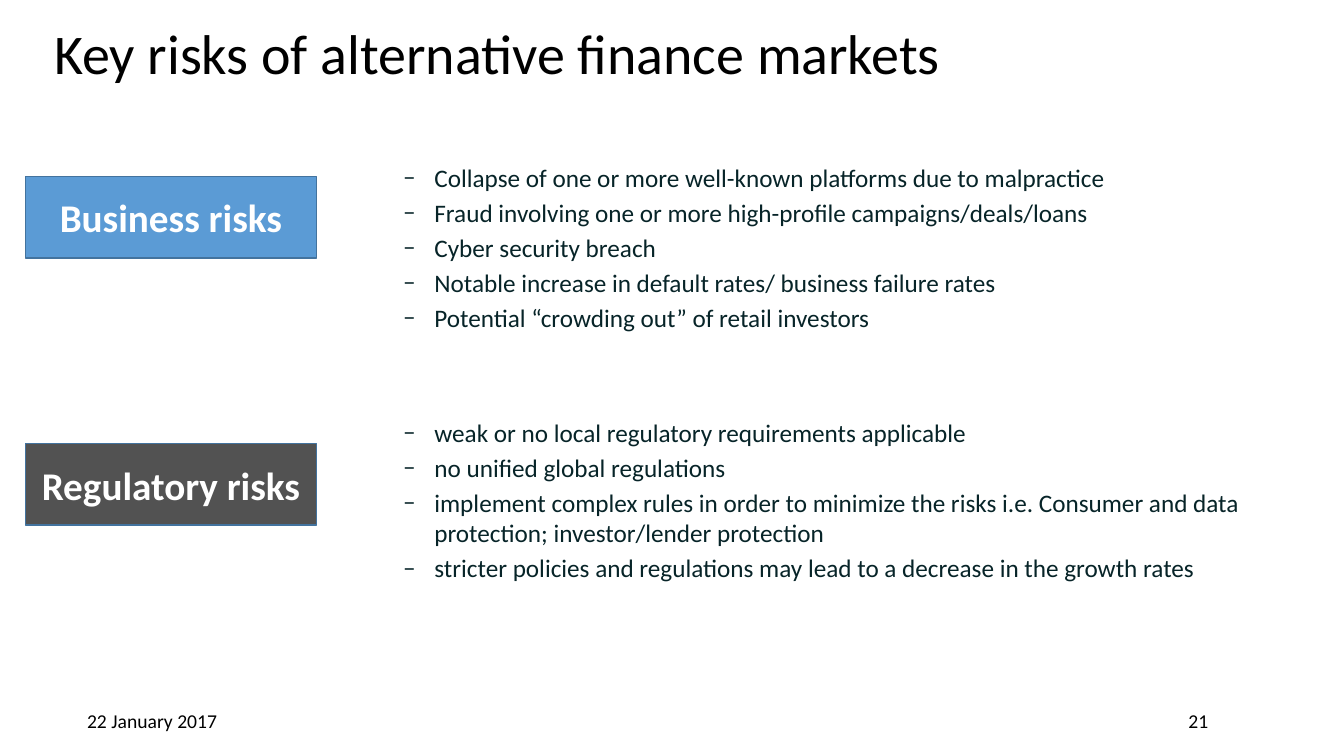
"""Build the slide on key risks of alternative finance markets."""
from lxml import etree
from pptx import Presentation
from pptx.dml.color import RGBColor
from pptx.enum.shapes import MSO_SHAPE
from pptx.enum.text import MSO_ANCHOR, PP_ALIGN
from pptx.oxml.ns import qn
from pptx.util import Inches, Pt

RECT = MSO_SHAPE.RECTANGLE
TOP, MIDDLE = MSO_ANCHOR.TOP, MSO_ANCHOR.MIDDLE
LEFT, CENTER = PP_ALIGN.LEFT, PP_ALIGN.CENTER
BLACK = RGBColor(0x00, 0x00, 0x00)
WHITE = RGBColor(0xFF, 0xFF, 0xFF)
INK = RGBColor(0x07, 0x24, 0x28)
BLUE = RGBColor(0x5B, 0x9B, 0xD5)
GRAY = RGBColor(0x52, 0x52, 0x52)
EDGE = RGBColor(0x43, 0x73, 0x9E)

RISKS = [
    ("Business risks", BLUE, 1.75, 1.56, [
        "Collapse of one or more well-known platforms due to malpractice",
        "Fraud involving one or more high-profile campaigns/deals/loans",
        "Cyber security breach",
        "Notable increase in default rates/ business failure rates",
        "Potential “crowding out” of retail investors",
    ]),
    ("Regulatory risks", GRAY, 4.4, 4.09, [
        "weak or no local regulatory requirements applicable",
        "no unified global regulations",
        "implement complex rules in order to minimize the risks i.e. "
        "Consumer and data protection; investor/lender protection",
        "stricter policies and regulations may lead to a decrease in the growth rates",
    ]),
]


def add_run(p, text, size, color, align=LEFT, bold=False):
    p.alignment = align
    r = p.add_run()
    r.text = text
    r.font.name = "Calibri"
    r.font.size = Pt(size)
    r.font.bold = bold
    r.font.color.rgb = color


def add_box(left, top, width, height, anchor):
    sp = s.shapes.add_textbox(Inches(left), Inches(top), Inches(width), Inches(height))
    tf = sp.text_frame
    tf.word_wrap = True
    tf.vertical_anchor = anchor
    return tf


prs = Presentation()
prs.slide_width = Inches(13.33)
prs.slide_height = Inches(7.5)
s = prs.slides.add_slide(prs.slide_layouts[6])

p = add_box(0.44, 0.02, 12.16, 1.08, MIDDLE).paragraphs[0]
p.line_spacing = 0.9
add_run(p, "Key risks of alternative finance markets", 40, BLACK)

for label, fill, label_top, list_top, items in RISKS:
    sp = s.shapes.add_shape(RECT, Inches(0.25), Inches(label_top), Inches(2.89), Inches(0.81))
    sp.shadow.inherit = False
    sp.fill.solid()
    sp.fill.fore_color.rgb = fill
    sp.line.color.rgb = EDGE
    sp.line.width = Pt(1)
    tf = sp.text_frame
    tf.word_wrap = True
    tf.vertical_anchor = MIDDLE
    add_run(tf.paragraphs[0], label, 28, WHITE, CENTER, True)

    tf = add_box(3.4, list_top, 9.42, 2.1, TOP)
    for i, item in enumerate(items):
        p = tf.add_paragraph() if i else tf.paragraphs[0]
        if i:
            p.space_before = Pt(3.4)
        pPr = p._p.get_or_add_pPr()
        pPr.set("marL", str(Inches(0.81)))
        pPr.set("indent", str(Inches(-0.31)))
        etree.SubElement(pPr, qn("a:buFont")).set("typeface", "Calibri")
        etree.SubElement(pPr, qn("a:buChar")).set("char", "–")
        add_run(p, item, 18, INK)

for text, left, width in [("22 January 2017", 0.01, 3), ("21", 10.45, 2.87)]:
    p = add_box(left, 6.95, width, 0.4, MIDDLE).paragraphs[0]
    add_run(p, text, 14, BLACK, CENTER)

prs.save("out.pptx")
